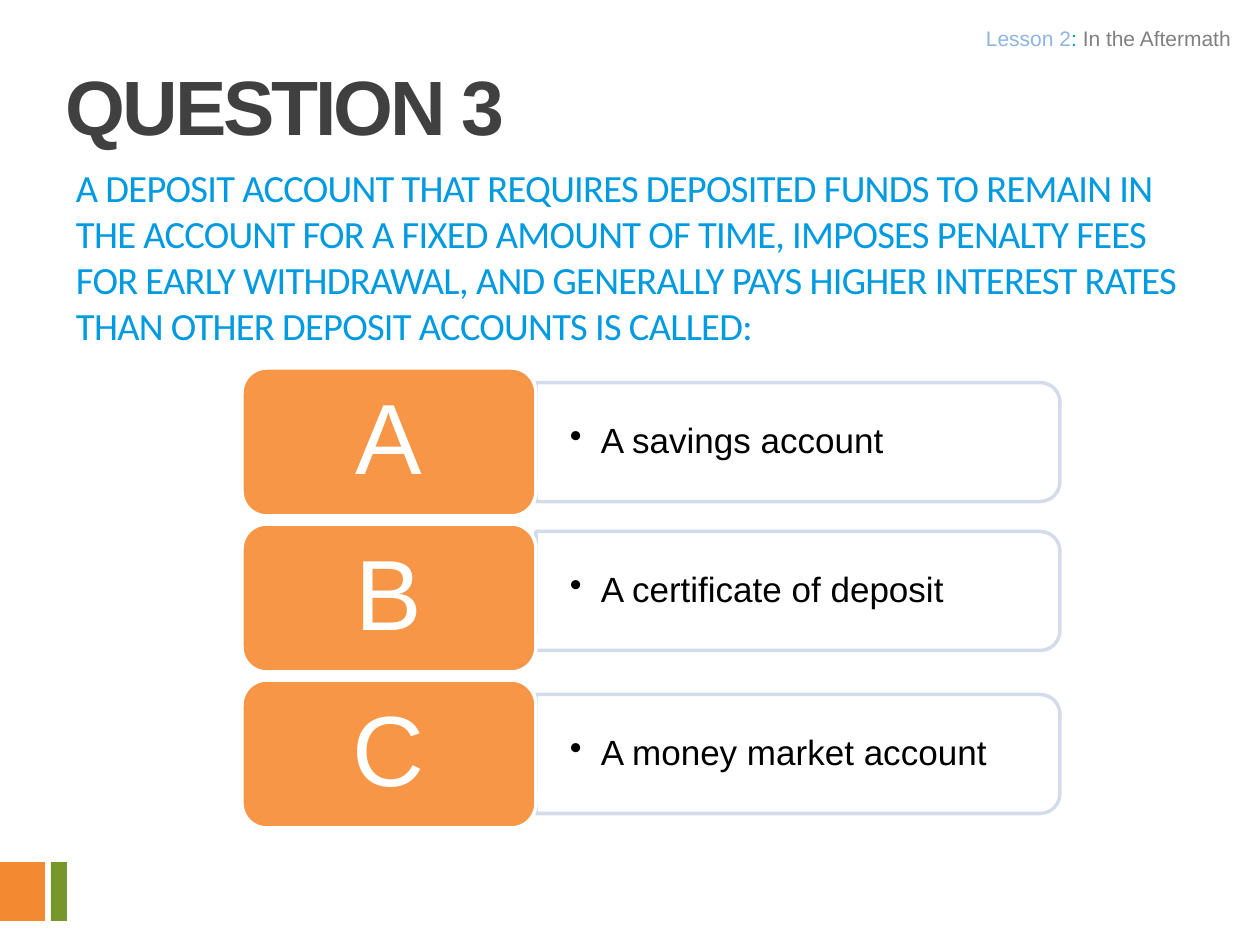
from lxml import etree
from pptx import Presentation
from pptx.dml.color import RGBColor
from pptx.enum.shapes import MSO_SHAPE
from pptx.enum.text import MSO_ANCHOR, PP_ALIGN
from pptx.oxml.ns import qn
from pptx.util import Emu, Pt

RECT, ROUND = MSO_SHAPE.RECTANGLE, MSO_SHAPE.ROUNDED_RECTANGLE
ROUND_TOP = MSO_SHAPE.ROUND_2_SAME_RECTANGLE
TOP, MIDDLE = MSO_ANCHOR.TOP, MSO_ANCHOR.MIDDLE
LEFT, CENTER, RIGHT = PP_ALIGN.LEFT, PP_ALIGN.CENTER, PP_ALIGN.RIGHT

# Content
COLORS = {
    "orange": "F38A31", "green": "77972B", "tile": "F79646", "white": "FFFFFF",
    "border": "D0D8E8", "blue": "009AE1", "pale": "8EB4E3", "gray": "808080",
    "dark": "404040", "black": "000000",
}
TITLE = "QUESTION 3"
LESSON = [("Lesson 2", "pale"), (": ", "blue"), ("In the Aftermath", "gray")]
PROMPT = (
    "A DEPOSIT ACCOUNT THAT REQUIRES DEPOSITED FUNDS TO REMAIN IN THE ACCOUNT "
    "FOR A FIXED AMOUNT OF TIME, IMPOSES PENALTY FEES FOR EARLY WITHDRAWAL, AND "
    "GENERALLY PAYS HIGHER INTEREST RATES THAN OTHER DEPOSIT ACCOUNTS IS CALLED:"
)
# letter, answer, vertical centre of the answer panel
ANSWERS = [
    ("A", "A savings account", 442),
    ("B", "A certificate of deposit", 591),
    ("C", "A money market account", 754),
]
ACCENTS = [(0, 862, 45, 59, "orange"), (51, 862, 16, 59, "green")]

# Layout in px
PX_PER_INCH = 126
TILE_X, TILE_Y, TILE_W, TILE_H, TILE_STEP = 242, 368, 294, 148, 156
PANEL_X, PANEL_W, PANEL_H = TILE_X + TILE_W, 524, 119
ANSWER_W, ANSWER_H, BULLET_INDENT = 518, 107, 31


def px(value):
    return Emu(round(value * 914400 / PX_PER_INCH))


def rgb(name):
    return RGBColor.from_string(COLORS[name])


def set_alpha(color_parent, percent):
    for color in color_parent.iter(qn("a:srgbClr")):
        etree.SubElement(color, qn("a:alpha"), val=str(percent * 1000))


def add_block(slide, kind, x, y, w, h, fill, line=None):
    block = slide.shapes.add_shape(kind, px(x), px(y), px(w), px(h))
    block.shadow.inherit = False
    block.fill.solid()
    block.fill.fore_color.rgb = rgb(fill)
    if line:
        block.line.color.rgb = rgb(line)
        block.line.width = Pt(2)
    else:
        block.line.fill.background()
    return block


def write(shape, runs, *, size, font="Arial", bold=False, align=LEFT, anchor=TOP,
          insets=(13, 6), spacing=None, line=None, bullet=False):
    """Fill a shape with one paragraph made of (text, colour) runs."""
    frame = shape.text_frame
    frame.word_wrap = True
    frame.vertical_anchor = anchor
    frame.margin_left = frame.margin_right = px(insets[0])
    frame.margin_top = frame.margin_bottom = px(insets[1])
    paragraph = frame.paragraphs[0]
    paragraph.alignment = align
    if line:
        paragraph.line_spacing = line
    if bullet:
        properties = paragraph._p.get_or_add_pPr()
        properties.set("marL", str(px(BULLET_INDENT)))
        properties.set("indent", str(-px(BULLET_INDENT)))
        etree.SubElement(properties, qn("a:buChar"), char="•")
    for text, color in runs:
        run = paragraph.add_run()
        run.text = text
        run.font.name, run.font.size, run.font.bold = font, Pt(size), bold
        run.font.color.rgb = rgb(color)
        if spacing:
            run._r.get_or_add_rPr().set("spc", str(round(spacing * 100)))


def add_text(slide, x, y, w, h, runs, **text_format):
    box = slide.shapes.add_textbox(px(x), px(y), px(w), px(h))
    write(box, runs, **text_format)


def add_answer(slide, index, letter, answer, center_y):
    # Panel: rounded top turned to the right
    center_x = PANEL_X + PANEL_W / 2
    panel = add_block(slide, ROUND_TOP, center_x - PANEL_H / 2, center_y - PANEL_W / 2,
                      PANEL_H, PANEL_W, "white", "border")
    panel.rotation = 90
    set_alpha(panel._element.spPr, 90)
    add_text(slide, PANEL_X, center_y - ANSWER_H / 2, ANSWER_W, ANSWER_H,
             [(answer, "black")], size=20, anchor=MIDDLE, insets=(34, 17),
             line=0.9, bullet=True)
    # Letter tile
    tile = add_block(slide, ROUND, TILE_X, TILE_Y + index * TILE_STEP,
                     TILE_W, TILE_H, "tile", "white")
    write(tile, [(letter, "white")], size=57, align=CENTER, anchor=MIDDLE,
          insets=(30, 15), line=0.9)


def main():
    deck = Presentation()
    deck.slide_width, deck.slide_height = px(1260), px(945)
    slide = deck.slides.add_slide(deck.slide_layouts[6])

    # Corner accents
    for x, y, w, h, color in ACCENTS:
        add_block(slide, RECT, x, y, w, h, color)

    # Question
    add_text(slide, 63, 158, 1155, 136, [(PROMPT, "blue")], size=22,
             font="Calibri", spacing=-0.4)

    # Answers
    for index, (letter, answer, center_y) in enumerate(ANSWERS):
        add_answer(slide, index, letter, answer, center_y)

    # Lesson label and title
    add_text(slide, 504, 21, 737, 40, LESSON, size=12, align=RIGHT, insets=(10, 5))
    add_text(slide, 53, 42, 1091, 105, [(TITLE, "dark")], size=44, bold=True,
             spacing=-1.8, line=Pt(59))

    deck.save("out.pptx")


if __name__ == "__main__":
    main()
